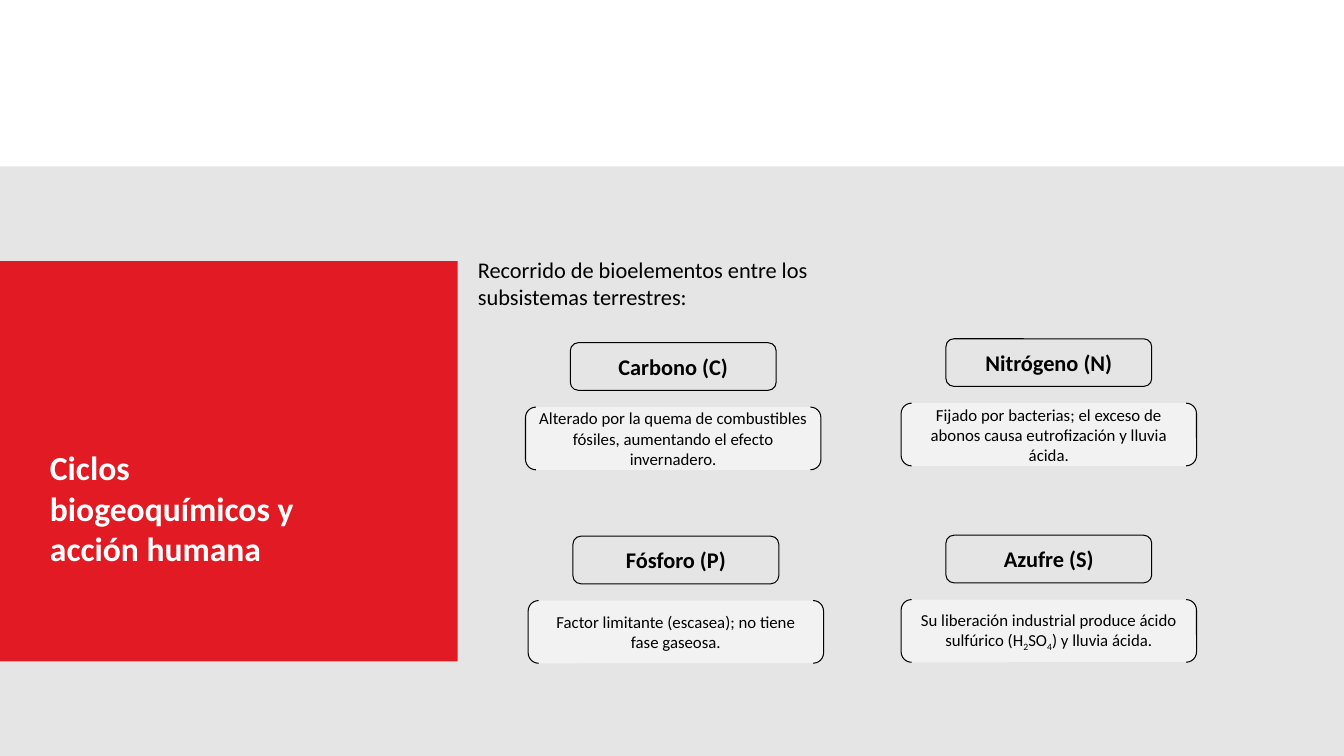
"""Build the slide on biogeochemical cycles and human action."""
from typing import Any, NamedTuple, Optional

from lxml import etree
from pptx import Presentation
from pptx import util as u
from pptx.dml.color import RGBColor
from pptx.enum import shapes, text
from pptx.oxml.ns import qn

COLORS = {"panel": "E5E5E5", "accent": "E21A23", "ink": "000000", "paper": "FFFFFF"}
CENTERED = {"alignment": text.PP_ALIGN.CENTER}
LEFT = {"alignment": text.PP_ALIGN.LEFT}
HEADING = {"name": "Calibri", "size": u.Pt(24), "bold": True}
INTRO = {"name": "Calibri", "size": u.Pt(16), "bold": False}
ELEMENT = {"name": "Calibri", "size": u.Pt(16), "bold": True}
DETAIL = {"name": "Calibri", "size": u.Pt(12), "bold": False}
SUBSCRIPT_MARK = "_"


class Box(NamedTuple):
    left: float
    top: float
    width: float
    height: float


class Cycle(NamedTuple):
    left: float
    top: float
    element: str
    detail: str


CYCLES = [
    Cycle(643.7, 242, "Nitrógeno (N)",
          "Fijado por bacterias; el exceso de abonos causa eutrofización y lluvia ácida."),
    Cycle(375.4, 244.8, "Carbono (C)",
          "Alterado por la quema de combustibles fósiles, aumentando el efecto invernadero."),
    Cycle(377.3, 383, "Fósforo (P)",
          "Factor limitante (escasea); no tiene fase gaseosa."),
    Cycle(643.7, 382.3, "Azufre (S)",
          "Su liberación industrial produce ácido sulfúrico (H_2_SO_4_) y lluvia ácida."),
]


def apply(target: Any, values: dict[str, Any]) -> None:
    for attribute, value in values.items():
        setattr(target, attribute, value)


def write(frame: Any, words: str, font: dict[str, Any], color: str,
          layout: dict[str, Any]) -> None:
    frame.word_wrap = True
    paragraph = frame.paragraphs[0]
    apply(paragraph, layout)
    for index, part in enumerate(words.split(SUBSCRIPT_MARK)):
        run = paragraph.add_run()
        run.text = part
        apply(run.font, font)
        run.font.color.rgb = RGBColor.from_string(COLORS[color])
        if index % 2:
            run.font._element.set("baseline", "-25000")


def add_block(slide: Any, kind: Any, box: Box, fill: Optional[str] = None,
              line: Optional[str] = None, opacity: int = 100) -> Any:
    block = slide.shapes.add_shape(kind, *map(u.Pt, box))
    block.shadow.inherit = False
    if fill:
        block.fill.solid()
        block.fill.fore_color.rgb = RGBColor.from_string(COLORS[fill])
        if opacity < 100:
            tint = block._element.spPr.find(qn("a:solidFill"))[0]
            etree.SubElement(tint, qn("a:alpha")).set("val", str(opacity * 1000))
    else:
        block.fill.background()
    if line:
        block.line.color.rgb = RGBColor.from_string(COLORS[line])
        block.line.width = u.Pt(0.75)
    else:
        block.line.fill.background()
    block.text_frame.vertical_anchor = text.MSO_ANCHOR.MIDDLE
    return block


def add_cycle(slide: Any, cycle: Cycle) -> None:
    element = add_block(slide, shapes.MSO_SHAPE.ROUNDED_RECTANGLE,
                        Box(cycle.left + 32, cycle.top, 147, 34), line="ink")
    write(element.text_frame, cycle.element, ELEMENT, "ink", CENTERED)
    detail = add_block(slide, shapes.MSO_SHAPE.DOUBLE_BRACKET,
                       Box(cycle.left, cycle.top + 46, 211, 44.8),
                       fill="paper", line="ink", opacity=50)
    write(detail.text_frame, cycle.detail, DETAIL, "ink", CENTERED)


def main() -> None:
    deck = Presentation()
    apply(deck, {"slide_width": u.Pt(960), "slide_height": u.Pt(540)})
    slide = deck.slides.add_slide(deck.slide_layouts[6])
    add_block(slide, shapes.MSO_SHAPE.RECTANGLE, Box(0, 118.8, 960, 421.2), fill="panel")
    add_block(slide, shapes.MSO_SHAPE.RECTANGLE, Box(0, 186.5, 327, 286), fill="accent")

    heading = slide.shapes.add_textbox(*map(u.Pt, Box(28.6, 316, 217, 124)))
    write(heading.text_frame, "Ciclos biogeoquímicos y acción humana", HEADING, "paper", LEFT)
    intro = add_block(slide, shapes.MSO_SHAPE.ROUNDED_RECTANGLE, Box(332.6, 185.3, 294, 34))
    write(intro.text_frame, "Recorrido de bioelementos entre los subsistemas terrestres:",
          INTRO, "ink", LEFT)
    for cycle in CYCLES:
        add_cycle(slide, cycle)
    deck.save("out.pptx")


if __name__ == "__main__":
    main()
